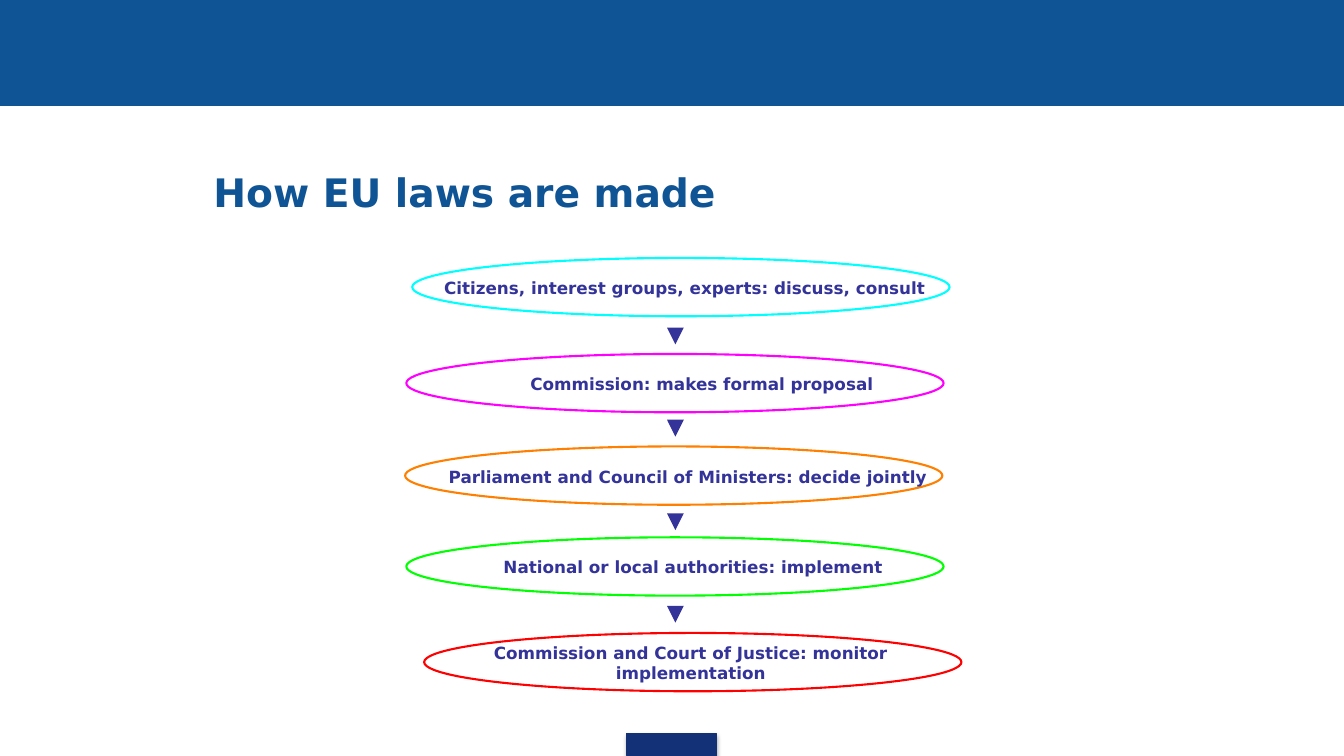
"""Build the slide on how EU laws are made."""
import lxml.etree
import pptx
import pptx.dml.color
import pptx.enum.shapes
import pptx.enum.text
import pptx.oxml
import pptx.oxml.ns
import pptx.util

Cm = pptx.util.Cm
Pt = pptx.util.Pt
KIND = pptx.enum.shapes.MSO_SHAPE
ALIGN = pptx.enum.text.PP_ALIGN
ANCHOR = pptx.enum.text.MSO_ANCHOR
qn = pptx.oxml.ns.qn

FONT = "DejaVu Sans"
BLUE = "0F5494"
NAVY = "133176"
INK = "333399"

STEPS = [
    ("Citizens, interest groups, experts: discuss, consult",
     "00FFFF", 10.39, 6.5, 10.59),
    ("Commission: makes formal proposal",
     "FF00FF", 10.24, 8.92, 11.02),
    ("Parliament and Council of Ministers: decide jointly",
     "FF8000", 10.21, 11.25, 10.67),
    ("National or local authorities: implement",
     "00FF00", 10.24, 13.54, 10.8),
    ("Commission and Court of Justice: monitor implementation",
     "FF0000", 10.69, 15.95, 10.74),
]
ARROWS = [8.48, 10.8, 13.16, 15.49]


def color(code):
    """Return the colour for a hex string."""
    return pptx.dml.color.RGBColor.from_string(code)


def add_shape(slide, kind, box, fill, line, width):
    """Add a filled and outlined shape."""
    shape = slide.shapes.add_shape(kind, *map(Cm, box))
    shape.shadow.inherit = False
    shape.fill.solid()
    shape.fill.fore_color.rgb = color(fill)
    shape.line.color.rgb = color(line)
    shape.line.width = Pt(width)
    return shape


def add_shadow(shape):
    """Give a shape a soft shadow below it."""
    effects = shape.element.spPr.find(qn("a:effectLst"))
    shadow = lxml.etree.SubElement(
        effects, qn("a:outerShdw"), blurRad=str(Pt(3.1)),
        dist=str(Pt(1.8)), dir="5400000", algn="ctr", rotWithShape="0")
    tint = lxml.etree.SubElement(shadow, qn("a:srgbClr"), val="000000")
    lxml.etree.SubElement(tint, qn("a:alpha"), val="35000")


def add_text(slide, box, text, size, ink, align, anchor):
    """Add a bold line of text in a wrapping box."""
    frame = slide.shapes.add_textbox(*map(Cm, box)).text_frame
    frame.word_wrap = True
    frame.vertical_anchor = anchor
    frame.text = text
    para = frame.paragraphs[0]
    para.alignment = align
    font = para.runs[0].font
    font.name = FONT
    font.size = Pt(size)
    font.bold = True
    font.color.rgb = color(ink)


def add_arrow(slide, left, top):
    """Add a short arrow that points down."""
    arrow = slide.shapes.add_connector(
        pptx.enum.shapes.MSO_CONNECTOR.STRAIGHT,
        Cm(left), Cm(top), Cm(left), Cm(top + 0.2))
    arrow.line.color.rgb = color(INK)
    arrow.line.width = Pt(4)
    props = arrow.element.spPr
    lxml.etree.SubElement(
        props.find(qn("a:ln")), qn("a:tailEnd"), type="triangle")
    lxml.etree.SubElement(props, qn("a:effectLst"))


def add_step(slide, text, line, left, top, inset):
    """Add one stage of the process as a labelled oval."""
    add_shape(slide, KIND.OVAL, (left, top, 13.54, 1.47),
              "FFFFFF", line, 1.5)
    add_text(slide, (inset, top + 0.22, 13.34, 1.07), text, 12, INK,
             ALIGN.CENTER, ANCHOR.MIDDLE)


def main():
    """Build and save the slide."""
    deck = pptx.Presentation()
    deck.slide_width = Cm(33.87)
    deck.slide_height = Cm(19.05)
    slide = deck.slides.add_slide(deck.slide_layouts[6])
    add_shape(slide, KIND.RECTANGLE, (0, 0, 33.87, 2.67),
              BLUE, BLUE, 0.75)
    badge = add_shape(slide, KIND.RECTANGLE, (15.8, 18.49, 2.26, 0.56),
                      NAVY, NAVY, 0.75)
    add_shadow(badge)
    add_text(slide, (5.13, 4.11, 20.4, 1.45), "How EU laws are made",
             28, BLUE, ALIGN.LEFT, ANCHOR.TOP)
    for step in STEPS:
        add_step(slide, *step)
    for top in ARROWS:
        add_arrow(slide, 17.02, top)
    deck.save("out.pptx")


if __name__ == "__main__":
    main()
